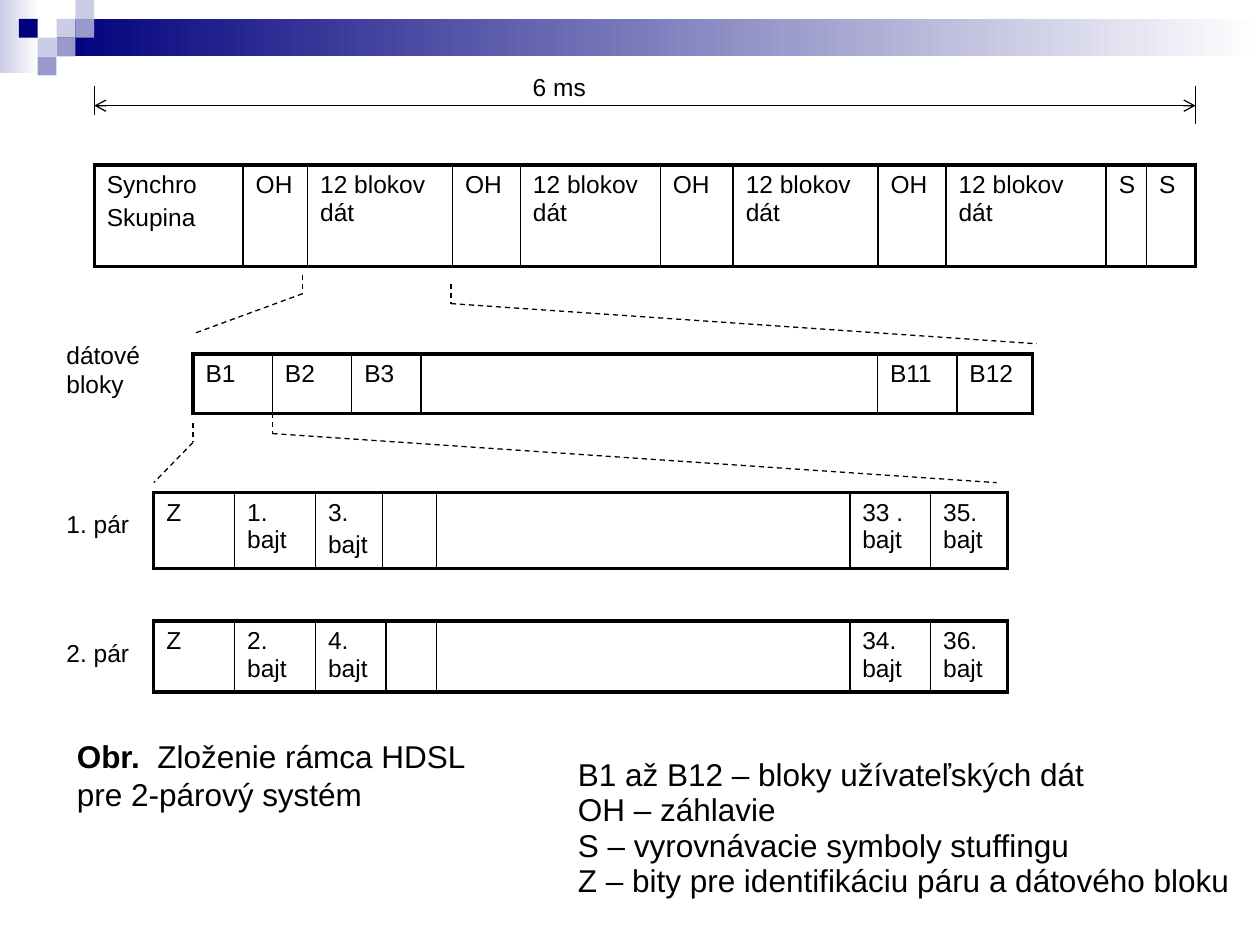
"""Build the slide showing the HDSL frame structure for a two-pair system."""
from itertools import pairwise

from lxml.etree import SubElement
from pptx import Presentation
from pptx.dml.color import RGBColor
from pptx.enum.dml import MSO_LINE
from pptx.enum.shapes import MSO_CONNECTOR, MSO_SHAPE
from pptx.oxml.ns import qn
from pptx.util import Cm, Pt

BLACK = RGBColor(0, 0, 0)
WHITE = RGBColor(255, 255, 255)
NAVY = RGBColor(0, 0, 0x7D)
LAVENDER = RGBColor(0xCC, 0xCC, 0xE6)
PERIWINKLE = RGBColor(0x99, 0x99, 0xCC)
FONT = "Arial"
SQUARE = 0.38

GRADIENT_BARS = [
    ((0, 0, 0.79, 1.47), LAVENDER),
    ((1.14, 0.38, 24.26, 0.76), NAVY),
]
SQUARES = [
    (3, 1, LAVENDER), (4, 0, LAVENDER), (4, 1, PERIWINKLE), (2, 2, LAVENDER),
    (1, 1, NAVY), (3, 2, PERIWINKLE), (2, 3, PERIWINKLE),
]

DATA = "12 blokov dát"
FRAME_ROWS = [
    (1.9, 3.33, 2.04, [
        ("Synchro\nSkupina", 3), ("OH", 1.3), (DATA, 2.92), ("OH", 1.37),
        (DATA, 2.82), ("OH", 1.47), (DATA, 2.92), ("OH", 1.37),
        (DATA, 3.23), ("S", 0.81), ("S", 0.99)]),
    (3.89, 7.14, 1.19, [
        ("B1", 1.6), ("B2", 1.6), ("B3", 1.4), ("", 9.2), ("B11", 1.6), ("B12", 1.52)]),
    (3.1, 9.93, 1.53, [
        ("Z", 1.63), ("1. bajt", 1.63), ("3.\nbajt", 1.35), ("", 1.09),
        ("", 8.33), ("33 . bajt", 1.63), ("35. bajt", 1.55)]),
    (3.1, 12.52, 1.43, [
        ("Z", 1.63), ("2. bajt", 1.63), ("4. bajt", 1.42), ("", 1.02),
        ("", 8.33), ("34. bajt", 1.63), ("36. bajt", 1.55)]),
]

LABELS = [
    ("6 ms", 10.49, 1.32, 0.84),
    ("dátové bloky", 1.09, 6.73, 1.45),
    ("1. pár", 1.09, 10.13, 0.84),
    ("2. pár", 1.09, 12.73, 0.84),
]
CAPTION = [("Obr. ", True), (" Zloženie rámca HDSL pre 2-párový systém", False)]
LEGEND = [
    "B1 až B12 – bloky užívateľských dát",
    "OH – záhlavie",
    "S – vyrovnávacie symboly stuffingu",
    "Z – bity pre identifikáciu páru a dátového bloku",
]

DIMENSION_TICKS = [((1.9, 2.31), (1.9, 1.73)), ((24.1, 2.51), (24.1, 1.73))]
DIMENSION_LINE = ((1.9, 2.13), (24.1, 2.13))
ZOOM_LINES = [
    [(6.1, 5.54), (6.1, 5.92), (3.89, 6.73)],
    [(9.09, 5.72), (9.09, 6.12), (20.9, 6.93)],
    [(5.49, 8.33), (5.49, 8.74), (20.09, 9.73)],
    [(3.89, 8.53), (3.89, 8.92), (3.1, 9.73)],
]


def style_font(font, size, bold=False):
    font.name, font.size, font.bold = FONT, Pt(size), bold
    font.color.rgb = BLACK


def add_rectangle(page, place):
    box = page.shapes.add_shape(MSO_SHAPE.RECTANGLE, *map(Cm, place))
    box.shadow.inherit = False
    box.line.fill.background()
    return box


def add_decoration(page):
    for place, color in GRADIENT_BARS:
        fill = add_rectangle(page, place).fill
        fill.gradient()
        fill.gradient_angle = 0
        for stop, stop_color in zip(fill.gradient_stops, (color, WHITE)):
            stop.color.rgb = stop_color
    for column, row, color in SQUARES:
        square = add_rectangle(page, (column * SQUARE, row * SQUARE, SQUARE, SQUARE))
        square.fill.solid()
        square.fill.fore_color.rgb = color


def add_border(cell, side, width):
    properties = cell._tc.get_or_add_tcPr()
    line = SubElement(properties, qn(f"a:ln{side}"), w=str(Pt(width)))
    fill = SubElement(line, qn("a:solidFill"))
    SubElement(fill, qn("a:srgbClr"), val=str(BLACK))


def add_frame_row(page, left, top, height, fields):
    total = sum(width for text, width in fields)
    frame = page.shapes.add_table(
        1, len(fields), Cm(left), Cm(top), Cm(total), Cm(height))
    table = frame.table
    table.first_row = table.horz_banding = False
    last = len(fields) - 1
    for index, (text, width) in enumerate(fields):
        table.columns[index].width = Cm(width)
        cell = table.cell(0, index)
        cell.text = text
        for paragraph in cell.text_frame.paragraphs:
            style_font(paragraph.font, 14)
            paragraph.space_before = Pt(2.8)
        cell.text_frame.paragraphs[0].space_before = Pt(0)
        add_border(cell, "L", 2.25 if index == 0 else 1)
        add_border(cell, "R", 2.25 if index == last else 1)
        add_border(cell, "T", 2.25)
        add_border(cell, "B", 2.25)
        cell.fill.background()


def add_text(page, place, paragraphs, size):
    box = page.shapes.add_textbox(*map(Cm, place))
    box.text_frame.word_wrap = True
    box.text_frame.text = "\n".join(paragraphs)
    for paragraph in box.text_frame.paragraphs:
        style_font(paragraph.font, size)
    return box.text_frame


def add_line(page, start, end, dashed=False, arrows=False):
    connector = page.shapes.add_connector(
        MSO_CONNECTOR.STRAIGHT, *map(Cm, start + end))
    connector.line.color.rgb = BLACK
    connector.line.width = Pt(0.75)
    if dashed:
        connector.line.dash_style = MSO_LINE.DASH
    if arrows:
        for tip in ("a:headEnd", "a:tailEnd"):
            SubElement(connector.line._get_or_add_ln(), qn(tip), type="arrow")
    SubElement(connector._element.spPr, qn("a:effectLst"))


def main():
    deck = Presentation()
    deck.slide_width, deck.slide_height = Cm(25.4), Cm(19.05)
    page = deck.slides.add_slide(deck.slide_layouts[6])

    add_decoration(page)
    for frame_row in FRAME_ROWS:
        add_frame_row(page, *frame_row)

    legend = add_text(page, (11.4, 15.42, 14, 2.95), LEGEND, 18)
    for paragraph in legend.paragraphs:
        paragraph.line_spacing = 0.5
        paragraph.space_before = Pt(9.5)
    for text, left, top, height in LABELS:
        add_text(page, (left, top, 2.79, height), [text], 14)
    caption = add_text(page, (1.3, 14.73, 8.41, 1.78), [], 18).paragraphs[0]
    for text, bold in CAPTION:
        span = caption.add_run()
        span.text = text
        style_font(span.font, 18, bold)

    for start, end in DIMENSION_TICKS:
        add_line(page, start, end)
    add_line(page, *DIMENSION_LINE, arrows=True)
    for points in ZOOM_LINES:
        for start, end in pairwise(points):
            add_line(page, start, end, dashed=True)

    deck.save("out.pptx")


if __name__ == "__main__":
    main()
